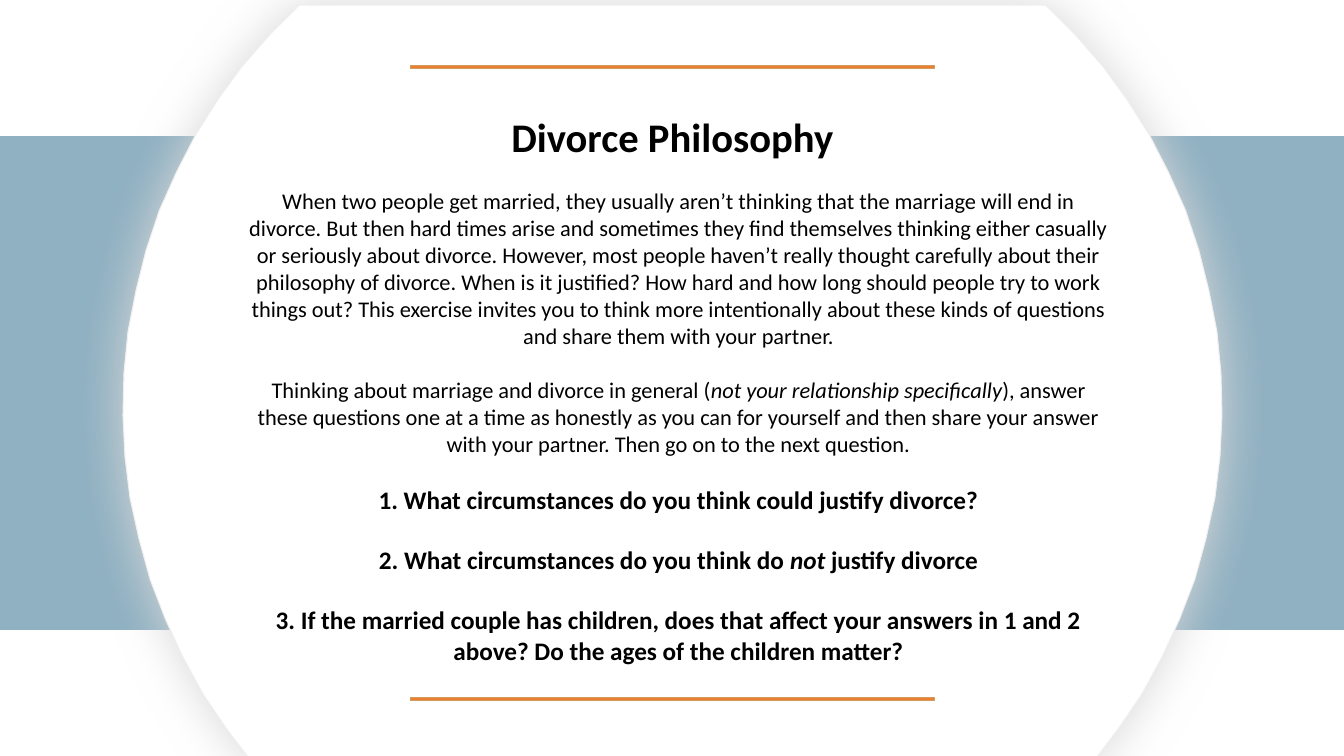
import math
from dataclasses import dataclass

import pptx
import pptx.dml.color
import pptx.enum.shapes
import pptx.enum.text
import pptx.oxml
import pptx.oxml.ns
import pptx.util
from pptx.util import Inches


@dataclass(frozen=True)
class Theme:
    font: str = "Calibri"
    ink: str = "000000"
    paper: str = "FFFFFF"
    band: str = "90B1C2"
    disc_edge: str = "EFEFEF"
    glow: str = "D8D8D8"
    rule: str = "ED7D31"
    rule_edge: str = "D09D5C"
    title_size: int = 29
    body_size: int = 16
    question_size: int = 18


theme = Theme()


def paint(shape, fill, edge):
    shape.shadow.inherit = False
    shape.fill.solid()
    shape.fill.fore_color.rgb = pptx.dml.color.RGBColor.from_string(fill)
    shape.line.color.rgb = pptx.dml.color.RGBColor.from_string(edge)
    shape.line.width = pptx.util.Pt(0.75)


def write(paragraph, runs, size, bold=False):
    """Fill a centred paragraph from runs that alternate upright and italic."""
    paragraph.alignment = pptx.enum.text.PP_ALIGN.CENTER
    paragraph.line_spacing = 1.0
    for index, text in enumerate(runs):
        run = paragraph.add_run()
        run.text = text
        run.font.name = theme.font
        run.font.size = pptx.util.Pt(size)
        run.font.bold = bold
        run.font.italic = index % 2 == 1
        run.font.color.rgb = pptx.dml.color.RGBColor.from_string(theme.ink)


deck = pptx.Presentation()
deck.slide_width, deck.slide_height = Inches(13.33), Inches(7.5)
slide = deck.slides.add_slide(deck.slide_layouts[5])
RECTANGLE = pptx.enum.shapes.MSO_SHAPE.RECTANGLE

band = slide.shapes.add_shape(RECTANGLE, 0, Inches(1.35), Inches(13.33), Inches(4.9))
paint(band, theme.band, theme.band)

# Disc cut off flat at its top and bottom, drawn in hundredths of an inch
center_x, center_y, radius = 667, 405, 545
top_angle = math.asin((5 - center_y) / radius)
bottom_angle = math.asin((755 - center_y) / radius)
STEPS = 20
right_arc = []
for step in range(STEPS + 1):
    angle = top_angle + (bottom_angle - top_angle) * step / STEPS
    right_arc.append((radius * math.cos(angle), center_y + radius * math.sin(angle)))
outline = [(center_x + dx, y) for dx, y in right_arc]
outline += [(center_x - dx, y) for dx, y in reversed(right_arc)]
builder = slide.shapes.build_freeform(*outline[0], scale=Inches(0.01))
builder.add_line_segments(outline[1:], close=True)
disc = builder.convert_to_shape()
paint(disc, theme.paper, theme.disc_edge)
effects = disc._element.spPr.find(pptx.oxml.ns.qn("a:effectLst"))
effects.append(pptx.oxml.parse_xml(
    f'<a:outerShdw {pptx.oxml.ns.nsdecls("a")} blurRad="{pptx.util.Pt(36)}" dist="0" '
    f'algn="ctr" rotWithShape="0"><a:srgbClr val="{theme.glow}"/></a:outerShdw>'))

title = slide.shapes.title
title.left, title.top = Inches(3.5), Inches(0.99)
title.width, title.height = Inches(6.34), Inches(0.73)
title.text_frame.vertical_anchor = pptx.enum.text.MSO_ANCHOR.MIDDLE
write(title.text_frame.paragraphs[0], ["Divorce Philosophy"], theme.title_size, bold=True)
disc._element.addnext(title._element)  # bring the title in front of the disc

for rule_top in (0.65, 6.92):
    rule = slide.shapes.add_shape(
        RECTANGLE, Inches(4.07), Inches(rule_top), Inches(5.2), Inches(0.03))
    paint(rule, theme.rule, theme.rule_edge)

introduction = [
    ["When two people get married, they usually aren’t thinking that the marriage will end in "
     "divorce. But then hard times arise and sometimes they find themselves thinking either "
     "casually or seriously about divorce. However, most people haven’t really thought "
     "carefully about their philosophy of divorce. When is it justified? How hard and how long "
     "should people try to work things out? This exercise invites you to think more "
     "intentionally about these kinds of questions and share them with your partner."],
    ["Thinking about marriage and divorce in general (",
     "not your relationship specifically",
     "), answer these questions one at a time as honestly as you can for yourself and then "
     "share your answer with your partner. Then go on to the next question."],
]
questions = [
    ["1. What circumstances do you think could justify divorce?"],
    ["2. What circumstances do you think do ", "not", " justify divorce"],
    ["3. If the married couple has children, does that affect your answers in 1 and 2 above? "
     "Do the ages of the children matter?"],
]
exercise = slide.shapes.add_textbox(
    Inches(2.36), Inches(1.81), Inches(8.74), Inches(4.84)).text_frame
exercise.word_wrap = True
exercise.vertical_anchor = pptx.enum.text.MSO_ANCHOR.MIDDLE
paragraph = exercise.paragraphs[0]
for passages, size, bold, gap_after in (
        (introduction, theme.body_size, False, 19.5),
        (questions, theme.question_size, True, 21.5)):
    for runs in passages:
        write(paragraph, runs, size, bold)
        if runs is not questions[-1]:
            paragraph.space_after = pptx.util.Pt(gap_after)
            paragraph = exercise.add_paragraph()

deck.save("out.pptx")
